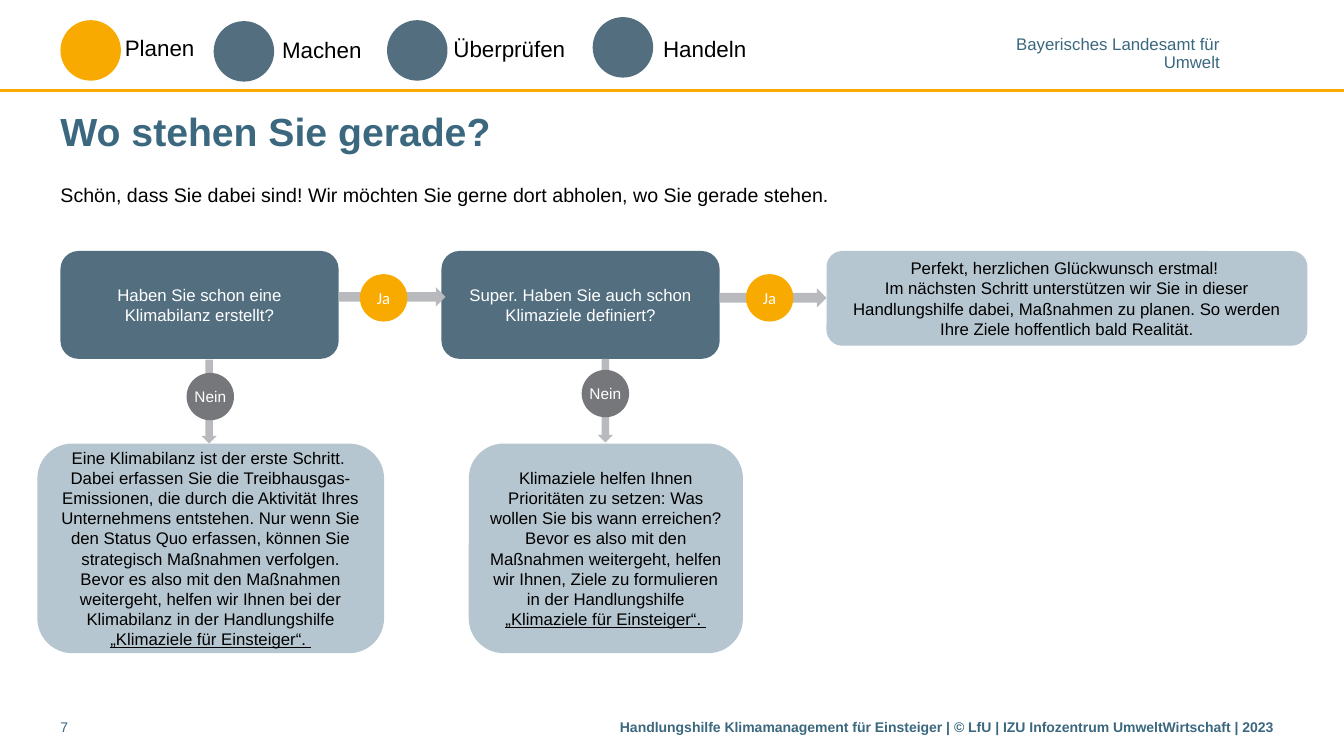
from lxml import etree
from pptx import Presentation, util as u
from pptx.dml.color import RGBColor
from pptx.enum import shapes, text
from pptx.oxml import ns

COLORS = {"orange": "F9AA00", "slate": "526E7F", "teal": "3B687F", "mist": "B6C6D0",
          "silver": "B8BABD", "gray": "76777A", "black": "000000", "white": "FFFFFF"}
WIDTH, HEIGHT = u.Inches(13.333), u.Inches(7.5)
KIND = shapes.MSO_SHAPE
ALIGN = text.PP_ALIGN
TIGHT = (0, 0, 0, 0)
FLUSH = (0, 0.05, 0, 0.05)
PADDED = (0.1, 0.05, 0.1, 0.05)
GUIDE = "„Klimaziele für Einsteiger“. "

STEPS = [("Planen", "orange", 4.5, 2.67, 8.55, 3.87, 12.5),
         ("Machen", "slate", 15.9, 2.8, 20.25, 4.13, 7.73),
         ("Überprüfen", "slate", 28.8, 2.67, 33, 4, 10.3),
         ("Handeln", "slate", 44.1, 2.27, 48.6, 4, 22.1)]

BRANCHES = [
    {"question": "Haben Sie schon eine Klimabilanz erstellt?",
     "yes": (22.28, 3.07), "yes_arrow": 4.8, "no": (9.38, 16.13), "no_arrow": (7.95, 18.93),
     "advice_box": (-1.72, 25.8),
     "advice": [["Eine Klimabilanz ist der erste Schritt. "],
                ["Dabei erfassen Sie die Treibhausgas-Emissionen, die durch die Aktivität Ihres "
                 "Unternehmens entstehen. Nur wenn Sie den Status Quo erfassen, können Sie "
                 "strategisch Maßnahmen verfolgen. Bevor es also mit den Maßnahmen weitergeht, "
                 "helfen wir Ihnen bei der Klimabilanz in der Handlungshilfe ", GUIDE]]},
    {"question": "Super. Haben Sie auch schon Klimaziele definiert?",
     "yes": (22.65, 3.07), "yes_arrow": 4.93, "no": (10.43, 15.73), "no_arrow": (9.08, 18.8),
     "advice_box": (2.03, 20.4),
     "advice": [["Klimaziele helfen Ihnen Prioritäten zu setzen: Was wollen Sie bis wann erreichen?"],
                ["Bevor es also mit den Maßnahmen weitergeht, helfen wir Ihnen, Ziele zu "
                 "formulieren in der Handlungshilfe ", GUIDE]]},
]
SUCCESS = [["Perfekt, herzlichen Glückwunsch erstmal! "],
           ["Im nächsten Schritt unterstützen wir Sie in dieser Handlungshilfe dabei, Maßnahmen "
            "zu planen. So werden Ihre Ziele hoffentlich bald Realität."]]


def place(region, left, top, width, height):
    """Turn percent offsets inside a region into slide lengths."""
    return (int(WIDTH * (region[0] + left) / 100), int(HEIGHT * (region[1] + top) / 100),
            int(WIDTH * width / 100), int(HEIGHT * height / 100))


def write(shape, paras, color="black", size=12, align=ALIGN.LEFT, insets=PADDED,
          anchor=text.MSO_ANCHOR.TOP, wrap=True, spacing=None, font="Arial", bold=False):
    """Fill a shape with formatted paragraphs, underlining the guide's name."""
    frame = shape.text_frame
    sides = ("margin_left", "margin_top", "margin_right", "margin_bottom")
    settings = dict(zip(sides, map(u.Inches, insets)), word_wrap=wrap, vertical_anchor=anchor,
                    auto_size=text.MSO_AUTO_SIZE.NONE)
    for name, value in settings.items():
        setattr(frame, name, value)
    for index, spans in enumerate(paras):
        para = frame.add_paragraph() if index else frame.paragraphs[0]
        para.alignment = align
        if spacing:
            para.line_spacing = spacing
        for words in spans:
            span = para.add_run()
            span.text = words
            look = {"name": font, "size": u.Pt(size), "bold": bold,
                    "underline": True if words == GUIDE else None}
            for name, value in look.items():
                setattr(span.font, name, value)
            span.font.color.rgb = RGBColor.from_string(COLORS[color])


def add_label(page, box, paras, **style):
    """Add a text box."""
    write(page.shapes.add_textbox(*box), paras, **style)


def add_block(page, kind, box, fill, paras=(), **style):
    """Add a flat filled shape with optional centred text."""
    shape = page.shapes.add_shape(kind, *box)
    shape.shadow.inherit = False
    shape.fill.solid()
    shape.fill.fore_color.rgb = RGBColor.from_string(COLORS[fill])
    shape.line.fill.background()
    if paras:
        write(shape, paras, align=ALIGN.CENTER, anchor=text.MSO_ANCHOR.MIDDLE, **style)
    return shape


def add_rule(page, region, top):
    """Draw a level line across the whole slide."""
    left, level, width, _ = place(region, 0, top, 100, 0)
    rule = page.shapes.add_connector(shapes.MSO_CONNECTOR.STRAIGHT, left, level,
                                     left + width, level)
    rule.line.color.rgb = RGBColor.from_string(COLORS["orange"])
    rule.line.width = u.Pt(2)
    etree.SubElement(rule._element.spPr, ns.qn("a:effectLst"))


def add_header(page, region):
    """Draw the step markers, the sender and the rule below them."""
    add_rule(page, region, 12)
    for name, fill, left, top, label_left, label_top, label_width in STEPS:
        add_block(page, KIND.OVAL, place(region, left, top, 4.5, 8), fill)
        add_label(page, place(region, label_left, label_top, label_width, 4.93), [[name]], size=16)
    add_label(page, place(region, 75.53, 4.93, 15.23, 4.53),
              [["Bayerisches Landesamt für"], ["Umwelt"]], color="teal", align=ALIGN.RIGHT,
              insets=TIGHT, wrap=False, spacing=0.85)


def add_opening(page, region):
    """Set the title and the welcome line."""
    title = page.shapes.title
    title.left, title.top, title.width, title.height = place(region, 0, 0, 92.33, 7.33)
    write(title, [["Wo stehen Sie gerade?"]], color="teal", size=28, bold=True, insets=FLUSH,
          anchor=text.MSO_ANCHOR.MIDDLE)
    add_label(page, place(region, 0, 10.13, 92.33, 5),
              [["Schön, dass Sie dabei sind! Wir möchten Sie gerne dort abholen, "
                "wo Sie gerade stehen."]], size=14, insets=FLUSH, spacing=u.Pt(16))


def add_branch(page, region, branch):
    """Draw one question with its yes and no exits."""
    add_block(page, KIND.ROUNDED_RECTANGLE, place(region, 0, 0, 20.7, 14.27), "slate",
              [[branch["question"]]], color="white")
    add_block(page, KIND.RIGHT_ARROW, place(region, 20.7, branch["yes_arrow"], 7.95, 2.53), "silver")
    down = add_block(page, KIND.RIGHT_ARROW, place(region, *branch["no_arrow"], 6.23, 2), "silver")
    down.rotation = 90
    left, width = branch["advice_box"]
    add_block(page, KIND.ROUNDED_RECTANGLE, place(region, left, 25.47, width, 27.73), "mist",
              branch["advice"])
    for answer, spot, fill, size, font in (("Ja", branch["yes"], "orange", 12, "Calibri"),
                                           ("Nein", branch["no"], "gray", 11, "Arial")):
        add_block(page, KIND.OVAL, place(region, *spot, 3.53, 6.27), fill, [[answer]],
                  color="white", size=size, font=font, insets=TIGHT, wrap=False)


def add_flow(page, region):
    """Draw the decision path from the questions to the final box."""
    for index, branch in reversed(list(enumerate(BRANCHES))):
        add_branch(page, (region[0] + 28.35 * index, region[1]), branch)
    add_block(page, KIND.ROUNDED_RECTANGLE, place(region, 57, 0, 35.78, 12.53), "mist", SUCCESS)


def add_footer(page, region):
    """Add the page number and the copyright line."""
    add_label(page, place(region, 0, 0, 2.25, 4.13), [["7"]], color="teal", size=10, insets=FLUSH)
    add_label(page, place(region, 41.63, 0, 50.7, 4.13),
              [["Handlungshilfe Klimamanagement für Einsteiger | © LfU | "
                "IZU Infozentrum UmweltWirtschaft | 2023"]],
              color="teal", size=10, bold=True, insets=FLUSH)


def main():
    """Build and save the deck."""
    deck = Presentation()
    deck.slide_width, deck.slide_height = WIDTH, HEIGHT
    page = deck.slides.add_slide(deck.slide_layouts[5])
    add_header(page, (0, 0))
    add_opening(page, (4.5, 13.6))
    add_flow(page, (4.5, 33.2))
    add_footer(page, (4.5, 94.4))
    deck.save("out.pptx")


if __name__ == "__main__":
    main()
